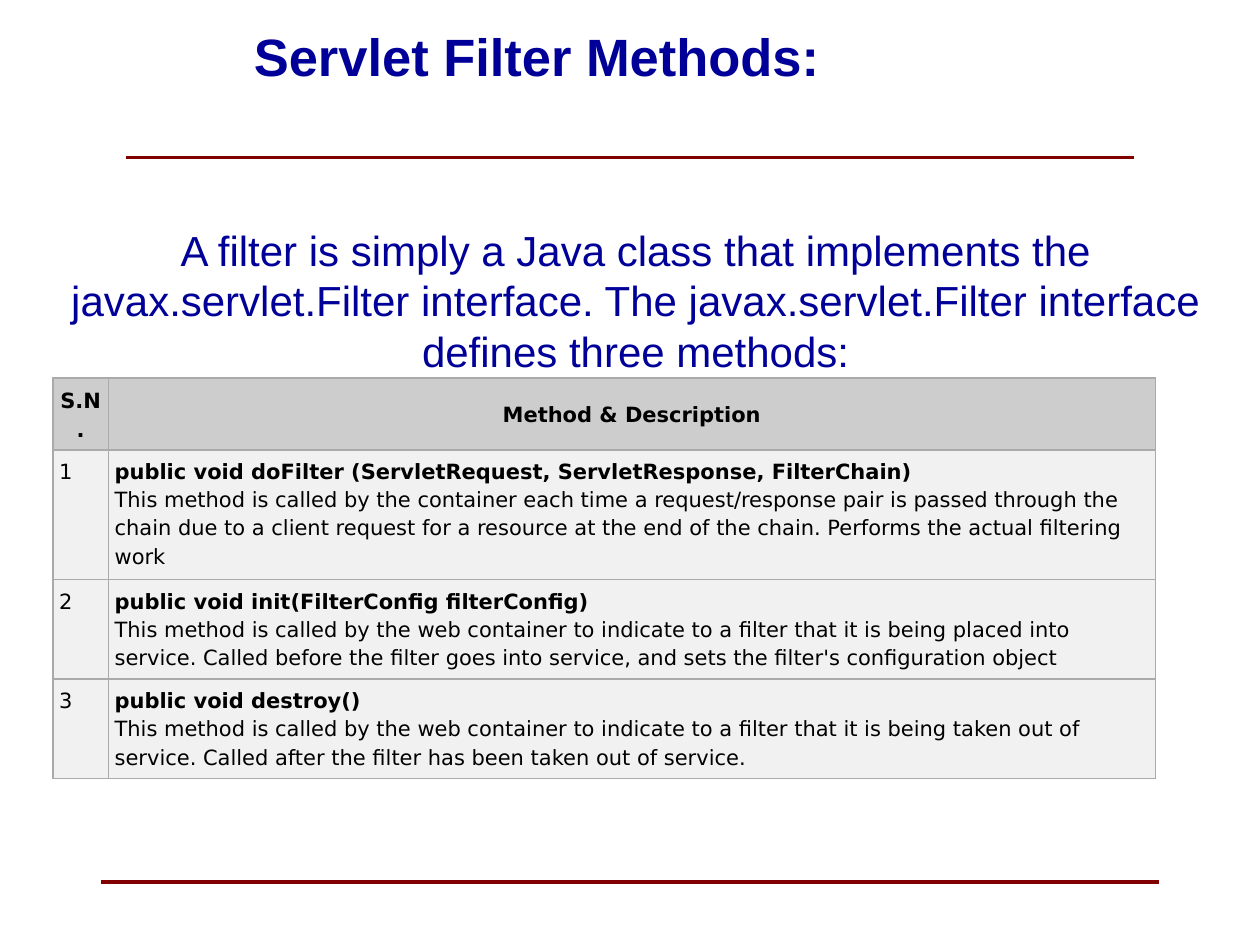
from lxml import etree
from pptx import Presentation
from pptx.dml.color import RGBColor
from pptx.enum.shapes import MSO_CONNECTOR
from pptx.enum.text import MSO_ANCHOR, PP_ALIGN
from pptx.oxml.ns import qn
from pptx.util import Inches, Pt

CENTER, LEFT = PP_ALIGN.CENTER, PP_ALIGN.LEFT
TOP, MIDDLE, BOTTOM = MSO_ANCHOR.TOP, MSO_ANCHOR.MIDDLE, MSO_ANCHOR.BOTTOM
STRAIGHT = MSO_CONNECTOR.STRAIGHT

# Content
TITLE = "Servlet Filter Methods:"
INTRO = ("A filter is simply a Java class that implements the javax.servlet.Filter "
         "interface. The javax.servlet.Filter interface defines three methods:")
HEADINGS = ("S.N.", "Method & Description")
METHODS = [
    ("public void doFilter (ServletRequest, ServletResponse, FilterChain)",
     "This method is called by the container each time a request/response pair is "
     "passed through the chain due to a client request for a resource at the end of "
     "the chain. Performs the actual filtering work"),
    ("public void init(FilterConfig filterConfig)",
     "This method is called by the web container to indicate to a filter that it is "
     "being placed into service. Called before the filter goes into service, and sets "
     "the filter's configuration object"),
    ("public void destroy()",
     "This method is called by the web container to indicate to a filter that it is "
     "being taken out of service. Called after the filter has been taken out of service."),
]

# Look and layout, in inches
COLORS = {"rule": "800000", "heading": "000099", "text": "000000",
          "header": "CDCDCD", "body": "F1F1F1", "border": "AAAAAA"}
SLIDE_W, SLIDE_H = 10, 7.5
RULES = [(0.8, 7), (1, 1.25)]  # side margin, height on the slide
TABLE_LEFT, TABLE_TOP = 0.42, 3
COLUMNS = (0.44, 8.31)
ROWS = (0.57, 1.03, 0.79, 0.79)
CELL_MARGIN = 0.05


def color(name):
    return RGBColor.from_string(COLORS[name])


def add_run(paragraph, text, font, size, tint, bold=False):
    run = paragraph.add_run()
    run.text = text
    run.font.name, run.font.size, run.font.bold = font, Pt(size), bold
    run.font.color.rgb = color(tint)


def add_heading(slide, text, box, size, anchor, left=0.1, bottom=0.05, bold=False):
    frame = slide.shapes.add_textbox(*map(Inches, box)).text_frame
    frame.word_wrap = True
    frame.vertical_anchor = anchor
    frame.margin_left, frame.margin_bottom = Inches(left), Inches(bottom)
    paragraph = frame.paragraphs[0]
    paragraph.alignment = CENTER
    add_run(paragraph, text, "Arial", size, "heading", bold)


def add_rule(slide, margin, y):
    rule = slide.shapes.add_connector(
        STRAIGHT, Inches(margin), Inches(y), Inches(SLIDE_W - margin), Inches(y))
    rule.line.color.rgb = color("rule")
    rule.line.width = Pt(2)
    etree.SubElement(rule.element.spPr, qn("a:effectLst"))


def fill_cell(cell, parts, fill, align, anchor):
    """Parts are (text, bold) pairs, one per line."""
    properties = cell._tc.get_or_add_tcPr()
    for side in ("lnL", "lnR", "lnT", "lnB"):
        border = etree.SubElement(properties, qn(f"a:{side}"), w=str(Pt(1)))
        solid = etree.SubElement(border, qn("a:solidFill"))
        etree.SubElement(solid, qn("a:srgbClr"), val=COLORS["border"])
    cell.fill.solid()
    cell.fill.fore_color.rgb = color(fill)
    cell.vertical_anchor = anchor
    cell.margin_left = cell.margin_right = Inches(CELL_MARGIN)
    cell.margin_top = cell.margin_bottom = Inches(CELL_MARGIN)
    paragraph = cell.text_frame.paragraphs[0]
    paragraph.alignment, paragraph.line_spacing = align, 1.15
    for index, (text, bold) in enumerate(parts):
        if index:
            paragraph.add_line_break()
        add_run(paragraph, text, "DejaVu Sans", 12, "text", bold)


def add_methods(slide):
    table = slide.shapes.add_table(
        len(ROWS), len(COLUMNS), Inches(TABLE_LEFT), Inches(TABLE_TOP),
        Inches(sum(COLUMNS)), Inches(sum(ROWS))).table
    for column, width in zip(table.columns, COLUMNS):
        column.width = Inches(width)
    for row, height in zip(table.rows, ROWS):
        row.height = Inches(height)
    for c, heading in enumerate(HEADINGS):
        fill_cell(table.cell(0, c), [(heading, True)], "header", CENTER, MIDDLE)
    for r, (signature, description) in enumerate(METHODS, 1):
        fill_cell(table.cell(r, 0), [(str(r), False)], "body", LEFT, TOP)
        fill_cell(table.cell(r, 1), [(signature, True), (description, False)],
                  "body", LEFT, TOP)


def main():
    deck = Presentation()
    deck.slide_width, deck.slide_height = Inches(SLIDE_W), Inches(SLIDE_H)
    slide = deck.slides.add_slide(deck.slide_layouts[6])

    # Rules above and below the content
    for margin, y in RULES:
        add_rule(slide, margin, y)

    # Title and introduction
    add_heading(slide, TITLE, (0, 0, 8.17, 0.88), 30, MIDDLE, left=0.45, bold=True)
    add_heading(slide, INTRO, (TABLE_LEFT, 0.92, 9.25, 2.22), 24, BOTTOM, bottom=0.16)

    # Method table
    add_methods(slide)
    deck.save("out.pptx")


if __name__ == "__main__":
    main()
